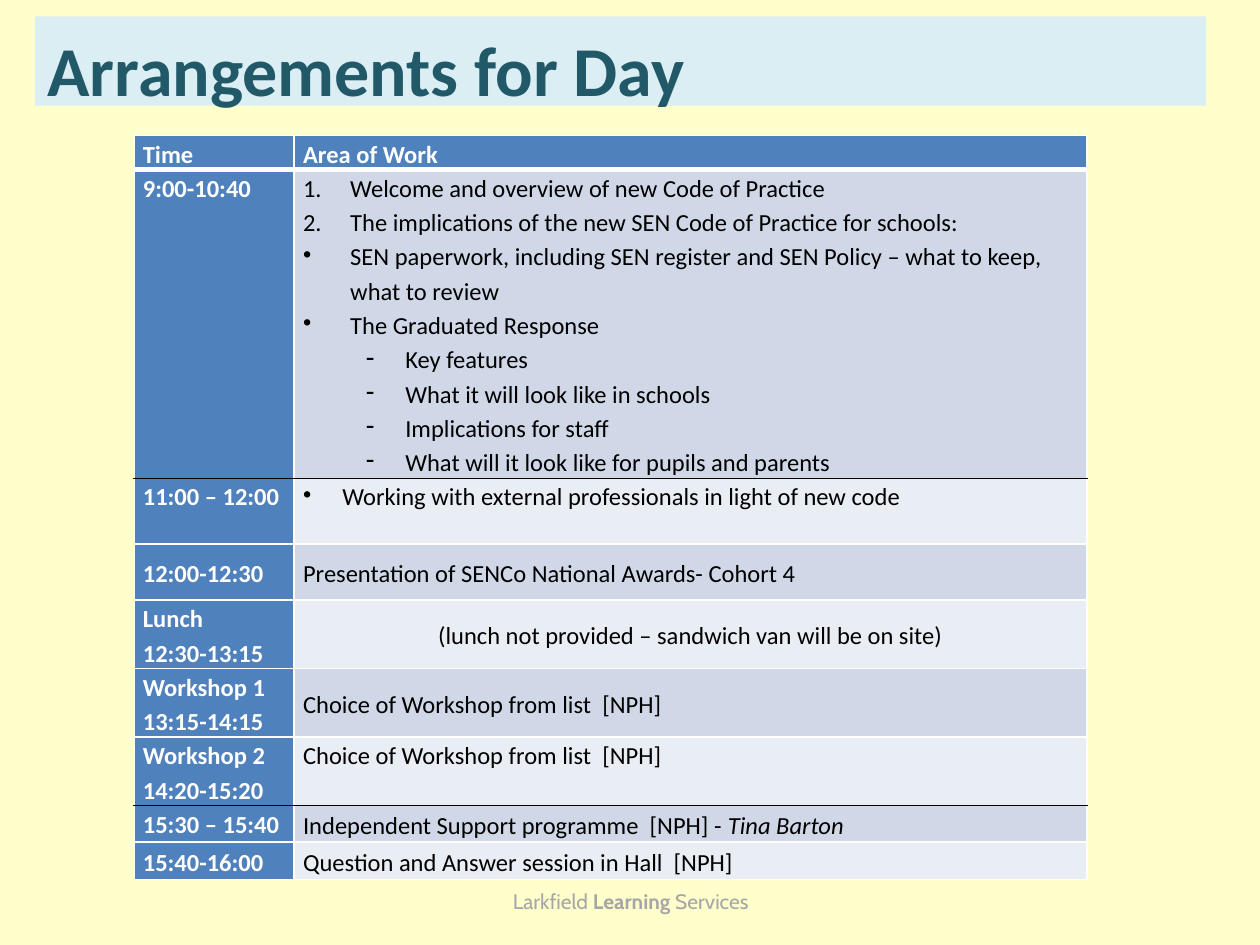
from pptx import Presentation
from pptx.dml.color import RGBColor
from pptx.enum.shapes import MSO_SHAPE
from pptx.enum.text import MSO_ANCHOR, PP_ALIGN
from pptx.oxml import parse_xml
from pptx.oxml.ns import nsdecls
from pptx.util import Cm, Pt

BLUE, DARK, LIGHT = "4F81BD", "D0D8E8", "E9EDF4"
WHITE, BLACK = "FFFFFF", "000000"
TOP, MIDDLE = MSO_ANCHOR.TOP, MSO_ANCHOR.MIDDLE
LEFT, CENTER = PP_ALIGN.LEFT, PP_ALIGN.CENTER

NUMBER = '<a:buAutoNum {} type="arabicPeriod"/>'
DOT = '<a:buChar {} char="•"/>'
DASH = '<a:buChar {} char="-"/>'
LISTS = {
    "number": (NUMBER, 0.95, 0.95, 0),
    "dot": (DOT, 0.95, 0.95, 0),
    "tight dot": (DOT, 0.79, 0.79, 0),
    "dash": (DASH, 2.06, 0.79, 1),
}

MORNING = [
    ("number", "Welcome and overview of new Code of Practice"),
    ("number", "The implications of the new SEN Code of Practice for schools:"),
    ("dot", "SEN paperwork, including SEN register and SEN Policy – what to keep, what to review"),
    ("dot", "The Graduated Response"),
    ("dash", "Key features"),
    ("dash", "What it will look like in schools"),
    ("dash", "Implications for staff"),
    ("dash", "What will it look like for pupils and parents"),
]
WORKSHOP = [(None, "Choice of Workshop from list  [NPH]")]
SESSIONS = [
    (6.22, ["9:00-10:40"], TOP, MORNING, TOP, LEFT),
    (1.33, ["11:00 – 12:00"], TOP,
     [("tight dot", "Working with external professionals in light of new code")], TOP, LEFT),
    (1.13, ["12:00-12:30"], MIDDLE,
     [(None, "Presentation of SENCo National Awards- Cohort 4")], MIDDLE, LEFT),
    (1.38, ["Lunch", "12:30-13:15"], TOP,
     [(None, "(lunch not provided – sandwich van will be on site)")], MIDDLE, CENTER),
    (1.38, ["Workshop 1", "13:15-14:15"], TOP, WORKSHOP, MIDDLE, LEFT),
    (1.38, ["Workshop 2", "14:20-15:20"], TOP, WORKSHOP, TOP, LEFT),
    (0.74, ["15:30 – 15:40"], TOP,
     [(None, "Independent Support programme  [NPH] - ", "Tina Barton")], MIDDLE, LEFT),
    (0.75, ["15:40-16:00"], MIDDLE,
     [(None, "Question and Answer session in Hall  [NPH]")], MIDDLE, LEFT),
]
RULES = {0: (WHITE, 3), 1: (BLACK, 0.25), 6: (BLACK, 1)}


def rgb(value):
    return RGBColor.from_string(value)


class Deck:
    """Holds the style and the current slide, and draws each kind of element."""

    def __init__(self, prs, background):
        self.font = "Calibri"
        self.s = prs.slides.add_slide(prs.slide_layouts[6])
        fill = self.s.background.fill
        fill.solid()
        fill.fore_color.rgb = rgb(background)

    def run(self, p, text, size, color, bold=False, italic=False, font=None):
        r = p.add_run()
        r.text = text
        r.font.name = font or self.font
        r.font.size = Pt(size)
        r.font.bold = bold
        r.font.italic = italic
        r.font.color.rgb = rgb(color)

    def title(self, text, x, y, w, h):
        sp = self.s.shapes.add_shape(MSO_SHAPE.RECTANGLE, Cm(x), Cm(y), Cm(w), Cm(h))
        sp.shadow.inherit = False
        sp.fill.solid()
        sp.fill.fore_color.rgb = rgb("DBEEF4")
        sp.line.fill.background()
        tf = sp.text_frame
        tf.word_wrap = True
        tf.vertical_anchor = TOP
        tf.margin_top = Cm(0.2)
        p = tf.paragraphs[0]
        p.alignment = LEFT
        self.run(p, text, 40, "215968", bold=True)

    def footer(self, parts, x, y, w, h):
        tf = self.s.shapes.add_textbox(Cm(x), Cm(y), Cm(w), Cm(h)).text_frame
        tf.word_wrap = True
        tf.vertical_anchor = MIDDLE
        p = tf.paragraphs[0]
        p.alignment = CENTER
        for text, bold in parts:
            self.run(p, text, 12, "A6A6A6", bold, font="Cabin")

    def cell(self, cell, fill, paragraphs, color, bold, anchor, align, top, bottom):
        cell.fill.solid()
        cell.fill.fore_color.rgb = rgb(fill)
        cell.margin_left = cell.margin_right = Cm(0.18)
        cell.margin_top = cell.margin_bottom = 0
        cell.vertical_anchor = anchor
        edges = {"L": (WHITE, 1), "R": (WHITE, 1), "T": top, "B": bottom}
        for i, (side, (line, width)) in enumerate(edges.items()):
            cell._tc.get_or_add_tcPr().insert(i, parse_xml(
                f'<a:ln{side} {nsdecls("a")} w="{Pt(width)}"><a:solidFill>'
                f'<a:srgbClr val="{line}"/></a:solidFill></a:ln{side}>'))
        tf = cell.text_frame
        for i, (kind, *runs) in enumerate(paragraphs):
            p = tf.add_paragraph() if i else tf.paragraphs[0]
            if kind:
                bullet, left, hang, level = LISTS[kind]
                pPr = p._p.get_or_add_pPr()
                pPr.append(parse_xml(bullet.format(nsdecls("a"))))
                pPr.set("marL", str(Cm(left)))
                pPr.set("indent", str(-Cm(hang)))
                p.level = level
            p.alignment = align
            p.line_spacing = 1.15
            for j, text in enumerate(runs):
                self.run(p, text, 14, color, bold, italic=j > 0)

    def timetable(self, header, sessions, x, y, widths):
        heights = [0.69] + [session[0] for session in sessions]
        table = self.s.shapes.add_table(len(heights), len(widths), Cm(x), Cm(y),
                                        Cm(sum(widths)), Cm(sum(heights))).table
        table.first_row = table.horz_banding = False
        for column, width in zip(table.columns, widths):
            column.width = Cm(width)
        for row, height in zip(table.rows, heights):
            row.height = Cm(height)
        plain = (WHITE, 1)
        for i, text in enumerate(header):
            self.cell(table.cell(0, i), BLUE, [(None, text)], WHITE, True,
                      TOP, LEFT, plain, RULES[0])
        for i, (_, times, time_anchor, work, anchor, align) in enumerate(sessions, 1):
            edges = RULES.get(i - 1, plain), RULES.get(i, plain)
            self.cell(table.cell(i, 0), BLUE, [(None, t) for t in times], WHITE, True,
                      time_anchor, LEFT, *edges)
            self.cell(table.cell(i, 1), DARK if i % 2 else LIGHT, work, BLACK, False,
                      anchor, align, *edges)


def main():
    prs = Presentation()
    prs.slide_width, prs.slide_height = Cm(25.4), Cm(19.05)
    deck = Deck(prs, "FFFFCC")
    deck.footer([("Larkfield ", False), ("Learning ", True), ("Services", False)],
                8.69, 17.65, 8.05, 1.02)
    deck.title("Arrangements for Day", 0.71, 0.33, 23.6, 1.8)
    deck.timetable(["Time", "Area of Work"], SESSIONS, 2.7, 2.73, [3.23, 15.98])
    prs.save("out.pptx")


if __name__ == "__main__":
    main()
